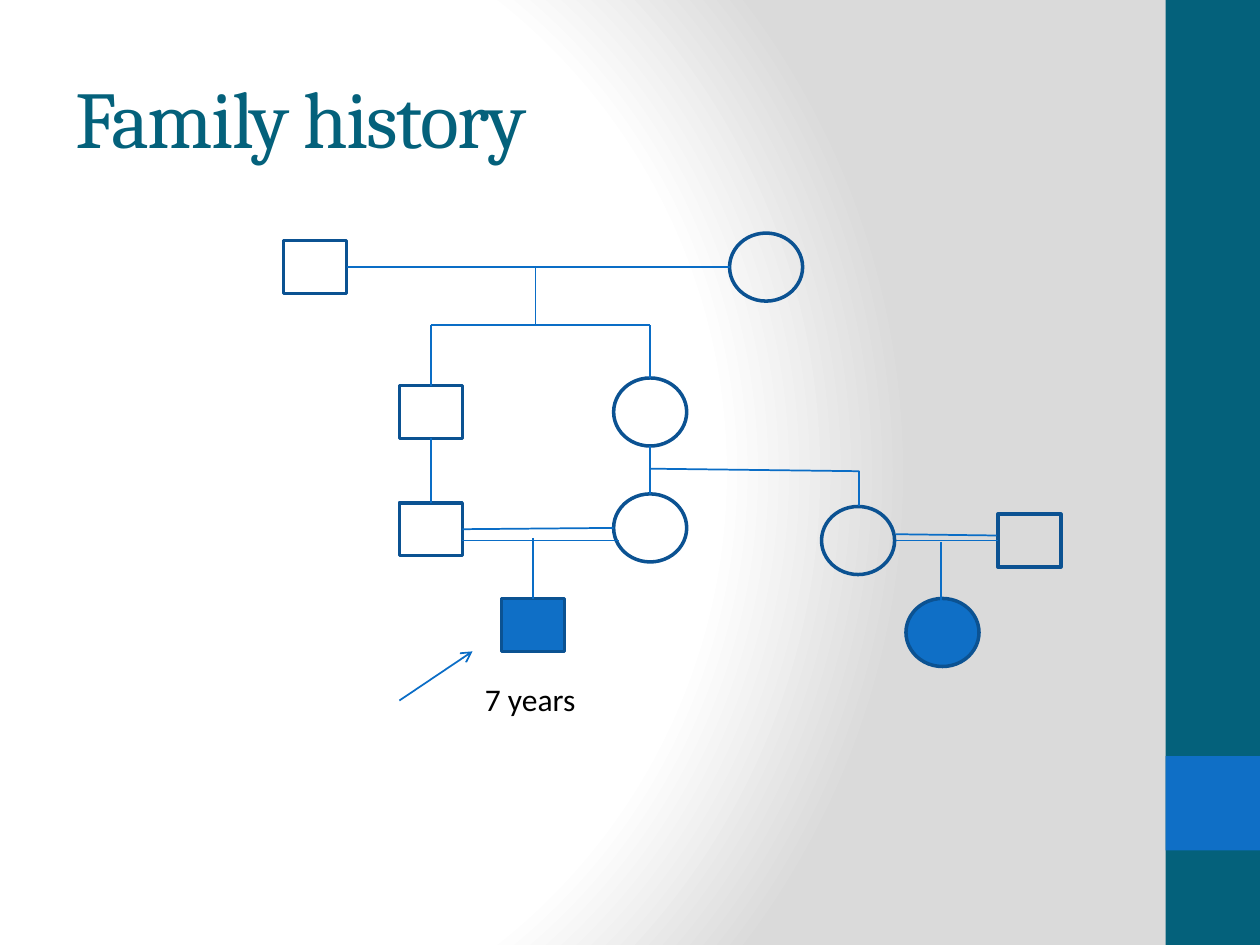
import dataclasses

import pptx
import pptx.dml.color
import pptx.enum.shapes
import pptx.enum.text
import pptx.oxml
import pptx.oxml.ns
import pptx.util

SHAPES = pptx.enum.shapes.MSO_SHAPE
ANCHOR = pptx.enum.text.MSO_ANCHOR
TOP, LEFT, BOTTOM, RIGHT = range(4)


@dataclasses.dataclass(frozen=True)
class Theme:
    teal: str = "04617B"
    blue: str = "0F6FC6"
    outline: str = "0B5292"
    link: str = "0A6DC6"
    text: str = "000000"
    background: tuple = ((0, "FFFFFF"), (75, "FFFFFF"), (100, "DADADA"))
    title_font: str = "Cambria"
    body_font: str = "Calibri"
    title_size: float = 46
    body_size: float = 18
    outline_width: float = 2
    link_width: float = 1


THEME = Theme()


@dataclasses.dataclass(frozen=True)
class Box:
    """A region on a grid of 100 columns by 75 rows."""
    left: float
    top: float
    width: float
    height: float

    def inner(self, left, top, width, height):
        return Box(self.left + left, self.top + top, width, height)

    def point(self, column, row):
        return grid(self.left + column), grid(self.top + row)

    def frame(self):
        return [grid(value) for value in (self.left, self.top, self.width, self.height)]


def grid(cells):
    return pptx.util.Inches(cells / 10)


def color(value):
    return pptx.dml.color.RGBColor.from_string(value)


def add_text(slide, box, text, *, font, size, fill, anchor=ANCHOR.TOP, spacing=0):
    frame = slide.shapes.add_textbox(*box.frame()).text_frame
    frame.word_wrap = True
    frame.vertical_anchor = anchor
    run = frame.paragraphs[0].add_run()
    run.text = text
    run.font.name = font
    run.font.size = pptx.util.Pt(size)
    run.font.color.rgb = color(fill)
    if spacing:
        run.font._element.set("spc", str(spacing * 100))


def add_shape(slide, box, kind, fill=None, line=None):
    shape = slide.shapes.add_shape(kind, *box.frame())
    shape.shadow.inherit = False
    if fill:
        shape.fill.solid()
        shape.fill.fore_color.rgb = color(fill)
    else:
        shape.fill.background()
    if line:
        shape.line.color.rgb = color(line)
        shape.line.width = pptx.util.Pt(THEME.outline_width)
    else:
        shape.line.fill.background()
    return shape


def add_link(slide, box, start, end, arrow=False):
    """Each end is a (column, row) point or a (shape, side) pair."""
    joined = [not isinstance(place[0], (int, float)) for place in (start, end)]
    points = [(0, 0) if join else box.point(*place)
              for join, place in zip(joined, (start, end))]
    connector = slide.shapes.add_connector(
        pptx.enum.shapes.MSO_CONNECTOR.STRAIGHT, *points[0], *points[1])
    if joined[0]:
        connector.begin_connect(*start)
    if joined[1]:
        connector.end_connect(*end)
    connector.line.color.rgb = color(THEME.link)
    connector.line.width = pptx.util.Pt(THEME.link_width)
    properties = connector._element.spPr
    if arrow:
        tail = pptx.oxml.parse_xml(
            f'<a:tailEnd {pptx.oxml.ns.nsdecls("a")} type="arrow"/>')
        connector.line._get_or_add_ln().append(tail)
    properties.append(pptx.oxml.parse_xml(
        f'<a:effectLst {pptx.oxml.ns.nsdecls("a")}/>'))


def set_background(slide):
    stops = "".join(
        f'<a:gs pos="{position * 1000}"><a:srgbClr val="{value}"/></a:gs>'
        for position, value in THEME.background)
    slide.element.cSld.insert(0, pptx.oxml.parse_xml(
        f'<p:bg {pptx.oxml.ns.nsdecls("p", "a")}><p:bgPr>'
        f'<a:gradFill rotWithShape="1"><a:gsLst>{stops}</a:gsLst>'
        '<a:path path="circle">'
        '<a:fillToRect l="20000" t="50000" r="100000" b="50000"/></a:path>'
        '</a:gradFill><a:effectLst/></p:bgPr></p:bg>'))


def build_side_band(slide, box):
    add_shape(slide, box, SHAPES.RECTANGLE, THEME.teal)
    accent = box.inner(0, box.height * 0.8, box.width, box.width)
    add_shape(slide, accent, SHAPES.RECTANGLE, THEME.blue)


def build_title(slide, box):
    add_text(slide, box, "Family history", font=THEME.title_font,
             size=THEME.title_size, fill=THEME.teal,
             anchor=ANCHOR.MIDDLE, spacing=-1)


def build_pedigree(slide, box):
    def person(kind, width, height, column, row, affected):
        place = box.inner(column - width / 2, row - height / 2, width, height)
        return add_shape(slide, place, kind,
                         THEME.blue if affected else None, THEME.outline)

    def male(column, row, affected=False):
        return person(SHAPES.RECTANGLE, 5, 4.2, column, row, affected)

    def female(column, row, affected=False):
        return person(SHAPES.OVAL, 5.8, 5.4, column, row, affected)

    # Main family columns
    son, daughter, child = 14.2, 31.6, 22.3

    # Males
    great_grandfather = male(5, 6.2)
    grandfather = male(son, 17.7)
    father = male(son, 27)
    patient = male(child, 34.6, affected=True)
    uncle = male(61.7, 27.9)

    # Females: great-grandmother, grandmother, mother, aunt, cousin
    for column, row in ((40.8, 6.2), (daughter, 17.7), (daughter, 26.9), (48.1, 27.9)):
        female(column, row)
    female(54.8, 35.2, affected=True)

    links = (
        # First couple and their two children
        ((great_grandfather, RIGHT), (37.9, 6.2)),
        ((22.5, 6.2), (22.5, 10.8)),
        ((son, 10.8), (daughter, 10.8)),
        ((son, 10.8), (grandfather, TOP)),
        ((daughter, 10.8), (daughter, 15)),
        # Next generation
        ((grandfather, BOTTOM), (father, TOP)),
        ((daughter, 20.4), (daughter, 24.2)),
        ((daughter, 22.2), (48.2, 22.4)),
        ((48.2, 22.4), (48.2, 25.2)),
        # Parents, with a double line, and the patient
        ((father, RIGHT), (28.7, 26.9)),
        ((16.7, 27.9), (29.1, 27.9)),
        ((child, 27.7), (patient, TOP)),
        # Aunt and uncle, with a double line, and the cousin
        ((51.1, 27.9), (uncle, LEFT)),
        ((51.1, 27.4), (59.1, 27.5)),
        ((54.7, 28), (54.7, 32.7)),
    )
    for start, end in links:
        add_link(slide, box, start, end)

    # Patient marker and age
    add_link(slide, box, (11.7, 40.6), (17.5, 36.7), arrow=True)
    add_text(slide, box.inner(17.5, 38.5, 10.8, 4), "7 years",
             font=THEME.body_font, size=THEME.body_size, fill=THEME.text)


def main():
    presentation = pptx.Presentation()
    presentation.slide_width = grid(100)
    presentation.slide_height = grid(75)
    slide = presentation.slides.add_slide(presentation.slide_layouts[6])
    set_background(slide)
    build_side_band(slide, Box(92.5, 0, 7.5, 75))
    build_title(slide, Box(5, 3, 83.3, 12.5))
    build_pedigree(slide, Box(20, 15, 65, 43))
    presentation.save("out.pptx")


if __name__ == "__main__":
    main()
